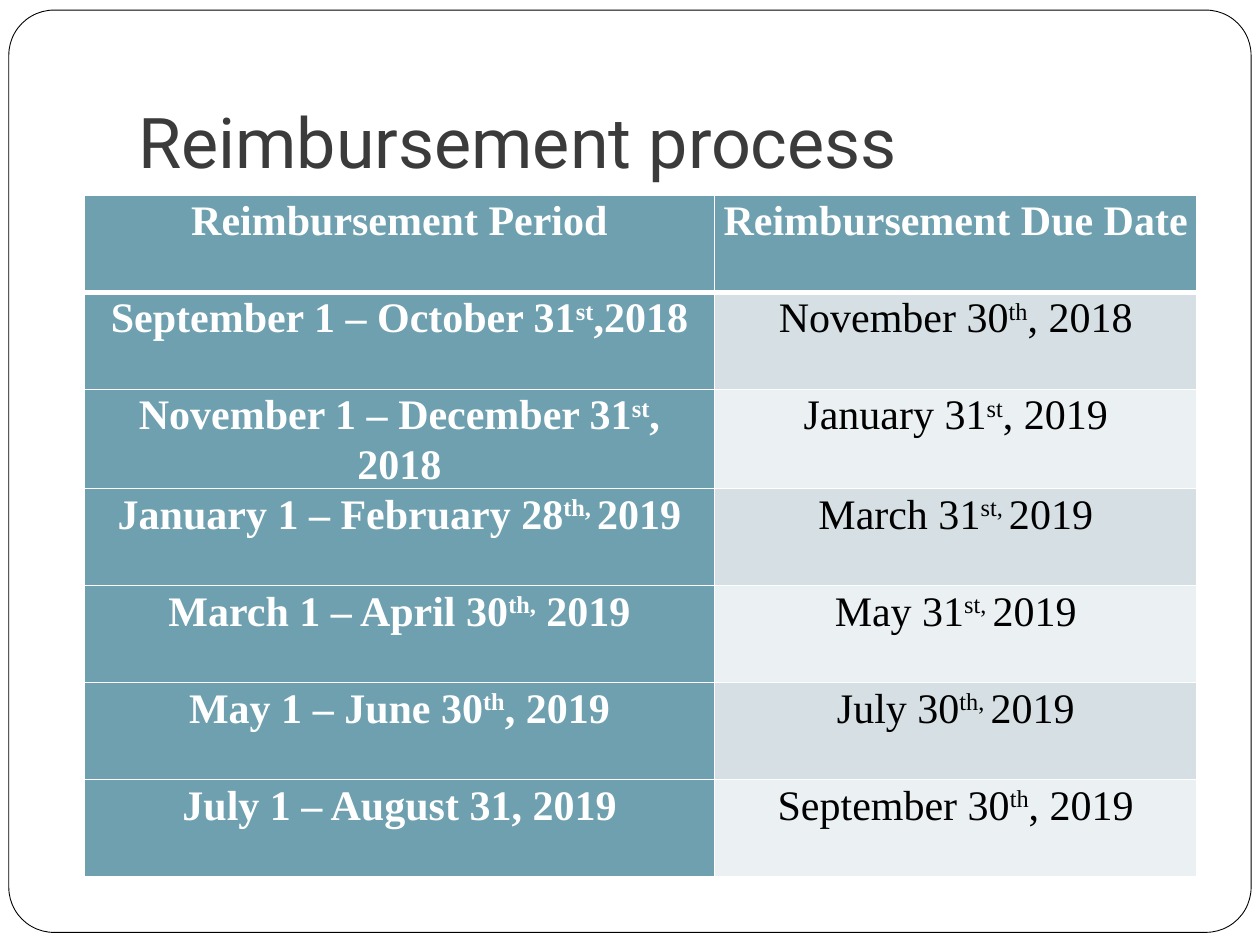
from lxml import etree
from pptx import Presentation
from pptx.dml.color import RGBColor
from pptx.enum import shapes, text
from pptx.oxml import ns
from pptx.util import Inches, Pt

TITLE = "Reimbursement process"
# Text between carets is superscript.
ROWS = [
    ("Reimbursement Period", "Reimbursement Due Date"),
    ("September 1 – October 31^st^,2018", "November 30^th^, 2018"),
    ("November 1 – December 31^st^, 2018", "January 31^st^, 2019"),
    ("January 1 – February 28^th, ^2019", "March 31^st, ^2019"),
    ("March 1 – April 30^th,^ 2019", "May 31^st, ^2019"),
    ("May 1 – June 30^th^, 2019", "July 30^th, ^2019"),
    ("July 1 – August 31, 2019", "September 30^th^, 2019"),
]
COLUMN_WIDTHS = (5, 3.83)
ROW_HEIGHT = 0.77

WHITE = RGBColor(0xFF, 0xFF, 0xFF)
BLACK = RGBColor(0, 0, 0)
CHARCOAL = RGBColor(0x3B, 0x3B, 0x3B)
TEAL = RGBColor(0x6E, 0xA0, 0xB0)
BANDS = (RGBColor(0xEB, 0xF0, 0xF2), RGBColor(0xD5, 0xDF, 0xE4))


def add_frame(page):
    """Draw the rounded page outline behind everything else."""
    frame = page.shapes.add_shape(
        shapes.MSO_SHAPE.ROUNDED_RECTANGLE,
        Inches(0.07), Inches(0.08), Inches(9.86), Inches(7.32))
    frame.adjustments[0] = 0.049
    frame.shadow.inherit = False
    frame.fill.solid()
    frame.fill.fore_color.rgb = WHITE
    frame.line.color.rgb = BLACK
    frame.line.width = Pt(0.5)
    page.shapes._spTree.insert(2, frame._element)


def format_title(title):
    title.left, title.top = Inches(1), Inches(0.3)
    title.width, title.height = Inches(8.5), Inches(1.25)
    box = title.text_frame
    box.text = TITLE
    box.auto_size = text.MSO_AUTO_SIZE.NONE
    box.vertical_anchor = text.MSO_ANCHOR.BOTTOM
    box.margin_bottom = Inches(0.1)
    para = box.paragraphs[0]
    para.alignment = text.PP_ALIGN.LEFT
    para.font.name = "Roboto"
    para.font.size = Pt(40)
    para.font.color.rgb = CHARCOAL


def set_borders(cell, widths):
    """Give the cell white borders; widths maps side letters to points."""
    properties = cell._tc.get_or_add_tcPr()
    for index, (side, width) in enumerate(widths.items()):
        line = etree.Element(ns.qn(f"a:ln{side}"), w=str(Pt(width)))
        fill = etree.SubElement(line, ns.qn("a:solidFill"))
        etree.SubElement(fill, ns.qn("a:srgbClr"), val=str(WHITE))
        properties.insert(index, line)


def fill_cell(cell, wording, row, column):
    emphasized = row == 0 or column == 0
    cell.fill.solid()
    cell.fill.fore_color.rgb = TEAL if emphasized else BANDS[row % 2]
    cell.margin_left = cell.margin_right = Inches(0.07)
    cell.margin_top = cell.margin_bottom = 0
    para = cell.text_frame.paragraphs[0]
    para.alignment = text.PP_ALIGN.CENTER
    para.line_spacing = 1.07
    para.font.name = "Times New Roman"
    para.font.size = Pt(24)
    para.font.bold = emphasized
    para.font.color.rgb = WHITE if emphasized else BLACK
    for index, part in enumerate(wording.split("^")):
        span = para.add_run()
        span.text = part
        if index % 2:
            span._r.get_or_add_rPr().set("baseline", "30000")
    set_borders(cell, {"L": 1, "R": 1, "T": 3 if row == 1 else 1,
                       "B": 3 if row == 0 else 1})


def add_schedule(page):
    table = page.shapes.add_table(
        len(ROWS), len(COLUMN_WIDTHS), Inches(0.67), Inches(1.55),
        Inches(sum(COLUMN_WIDTHS)), Inches(ROW_HEIGHT * len(ROWS))).table
    for column, width in zip(table.columns, COLUMN_WIDTHS):
        column.width = Inches(width)
    for row, wordings in enumerate(ROWS):
        table.rows[row].height = Inches(ROW_HEIGHT)
        for column, wording in enumerate(wordings):
            fill_cell(table.cell(row, column), wording, row, column)


def main():
    deck = Presentation()
    deck.slide_width, deck.slide_height = Inches(10), Inches(7.5)
    page = deck.slides.add_slide(deck.slide_layouts[5])
    add_frame(page)
    format_title(page.shapes.title)
    add_schedule(page)
    deck.save("out.pptx")


if __name__ == "__main__":
    main()
